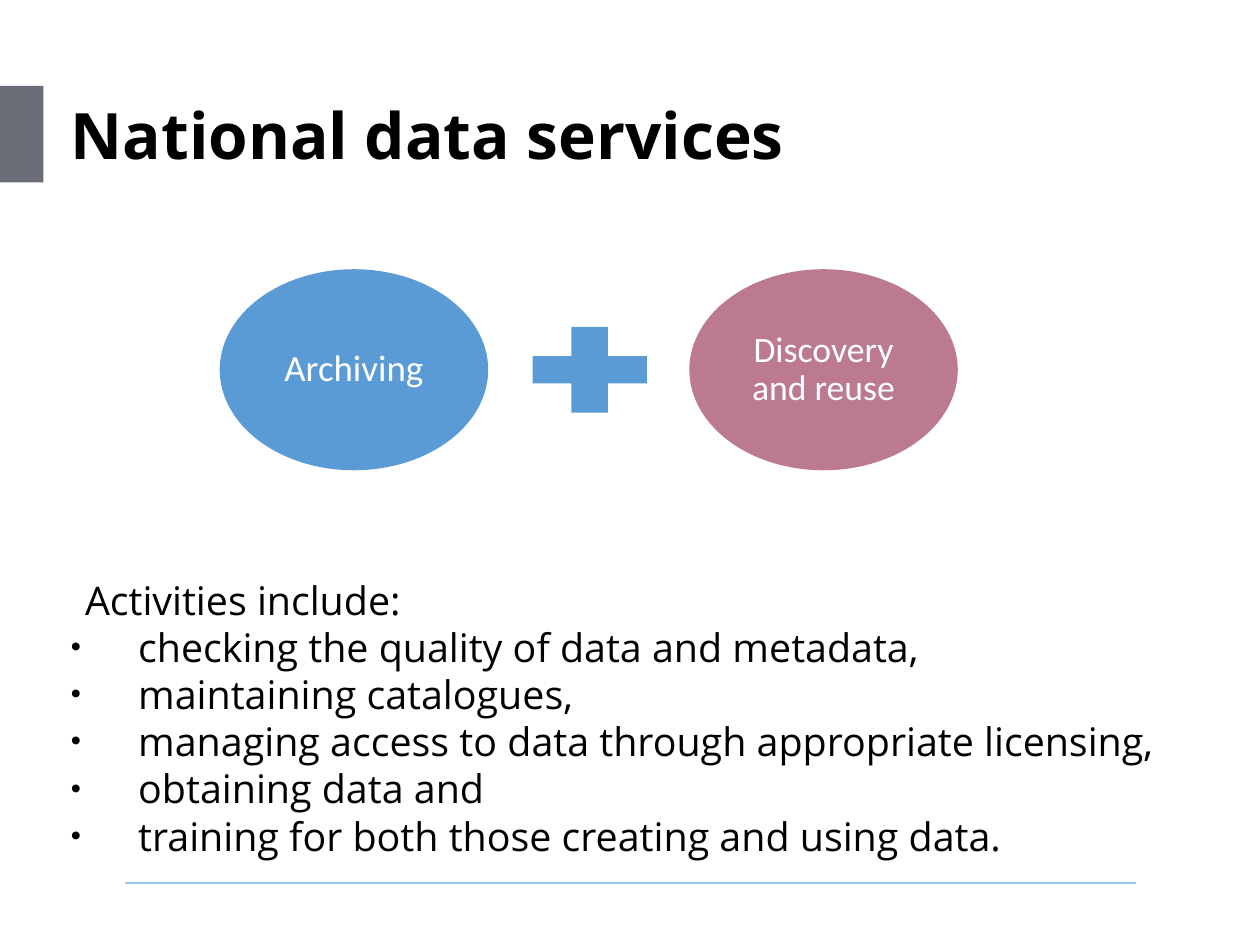
from dataclasses import dataclass
from lxml.etree import SubElement as Sub
from pptx import Presentation
from pptx.dml.color import RGBColor as Rgb
from pptx.enum.shapes import MSO_CONNECTOR as Link, MSO_SHAPE as Kind
from pptx.enum.text import MSO_ANCHOR as Anchor, PP_ALIGN as Align
from pptx.oxml.ns import qn
from pptx.util import Inches, Pt

COLORS = {
    "black": "000000",
    "white": "FFFFFF",
    "gray": "6A6C77",
    "blue": "5B9BD5",
    "rose": "BC7A8E",
    "sky": "98C5E8",
}
TASKS = [
    "checking the quality of data and metadata,",
    "maintaining catalogues,",
    "managing access to data through appropriate licensing,",
    "obtaining data and",
    "training for both those creating and using data.",
]


@dataclass
class Oval:
    text: str
    left: float
    color: str
    size: int


OVALS = [
    Oval("Archiving", 2.48, "blue", 30),
    Oval("Discovery and reuse", 7.78, "rose", 29),
]


def tint(name: str) -> Rgb:
    return Rgb.from_string(COLORS[name])


def paint(shape, color: str) -> None:
    shape.shadow.inherit = False
    shape.fill.solid()
    shape.fill.fore_color.rgb = tint(color)
    shape.line.fill.background()


def write(shape, lines: list[str], *, size: int, font: str = "Open Sans",
          color: str = "black", bold: bool = False, align=Align.LEFT,
          anchor=Anchor.MIDDLE, inset: float = 0.06,
          space: float = 1.0) -> list:
    frame = shape.text_frame
    frame.word_wrap = True
    frame.vertical_anchor = anchor
    frame.margin_left = frame.margin_right = Inches(inset)
    frame.margin_top = frame.margin_bottom = Inches(inset)
    for count, line in enumerate(lines):
        para = frame.add_paragraph() if count else frame.paragraphs[0]
        para.alignment = align
        para.line_spacing = space
        run = para.add_run()
        run.text = line
        run.font.name = font
        run.font.size = Pt(size)
        run.font.bold = bold
        run.font.color.rgb = tint(color)
    return list(frame.paragraphs)


def indent(para, left: float, first: float = 0, bullet: str = "") -> None:
    props = para._p.get_or_add_pPr()
    props.set("marL", str(Inches(left)))
    props.set("indent", str(Inches(first)))
    if bullet:
        Sub(props, qn("a:buSzPct")).set("val", "73000")
        Sub(props, qn("a:buFont")).set("typeface", "Arial")
        Sub(props, qn("a:buChar")).set("char", bullet)


def box(slide, left: float, top: float, width: float, height: float):
    return slide.shapes.add_textbox(
        Inches(left), Inches(top), Inches(width), Inches(height))


def block(slide, kind, left: float, top: float, width: float, height: float,
          color: str):
    shape = slide.shapes.add_shape(
        kind, Inches(left), Inches(top), Inches(width), Inches(height))
    paint(shape, color)
    return shape


def rule(slide, left: float, right: float, top: float) -> None:
    line = slide.shapes.add_connector(
        Link.STRAIGHT, Inches(left), Inches(top), Inches(right), Inches(top))
    line.line.color.rgb = tint("sky")
    line.line.width = Pt(2.25)
    Sub(line._element.spPr, qn("a:effectLst"))


def plus(slide) -> None:
    x1, x2, x3, x4 = map(Inches, (6.01, 6.45, 6.86, 7.3))
    y1, y2, y3, y4 = map(Inches, (3.69, 4.02, 4.33, 4.66))
    form = slide.shapes.build_freeform(x1, y2)
    form.add_line_segments([
        (x2, y2), (x2, y1), (x3, y1), (x3, y2), (x4, y2), (x4, y3),
        (x3, y3), (x3, y4), (x2, y4), (x2, y3), (x1, y3)])
    paint(form.convert_to_shape(), "blue")


def main() -> None:
    deck = Presentation()
    deck.slide_width, deck.slide_height = Inches(14.22), Inches(10.67)
    slide = deck.slides.add_slide(deck.slide_layouts[6])
    block(slide, Kind.RECTANGLE, 0, 0.97, 0.49, 1.09, "gray")
    rule(slide, 1.41, 12.82, 9.97)
    write(box(slide, 0.74, 0.97, 12.07, 1.09), ["National data services"],
          size=52, bold=True)
    intro, *items = write(
        box(slide, 0.74, 6.44, 12.77, 3.32), ["Activities include:", *TASKS],
        size=32, anchor=Anchor.TOP)
    indent(intro, 0.16)
    for item in items:
        indent(item, 0.76, -0.76, "•")
    for oval in OVALS:
        shape = block(slide, Kind.OVAL, oval.left, 3.04, 3.03, 2.27,
                      oval.color)
        write(shape, [oval.text], size=oval.size, font="Calibri",
              color="white", align=Align.CENTER, inset=0, space=0.9)
    plus(slide)
    deck.save("out.pptx")


if __name__ == "__main__":
    main()
